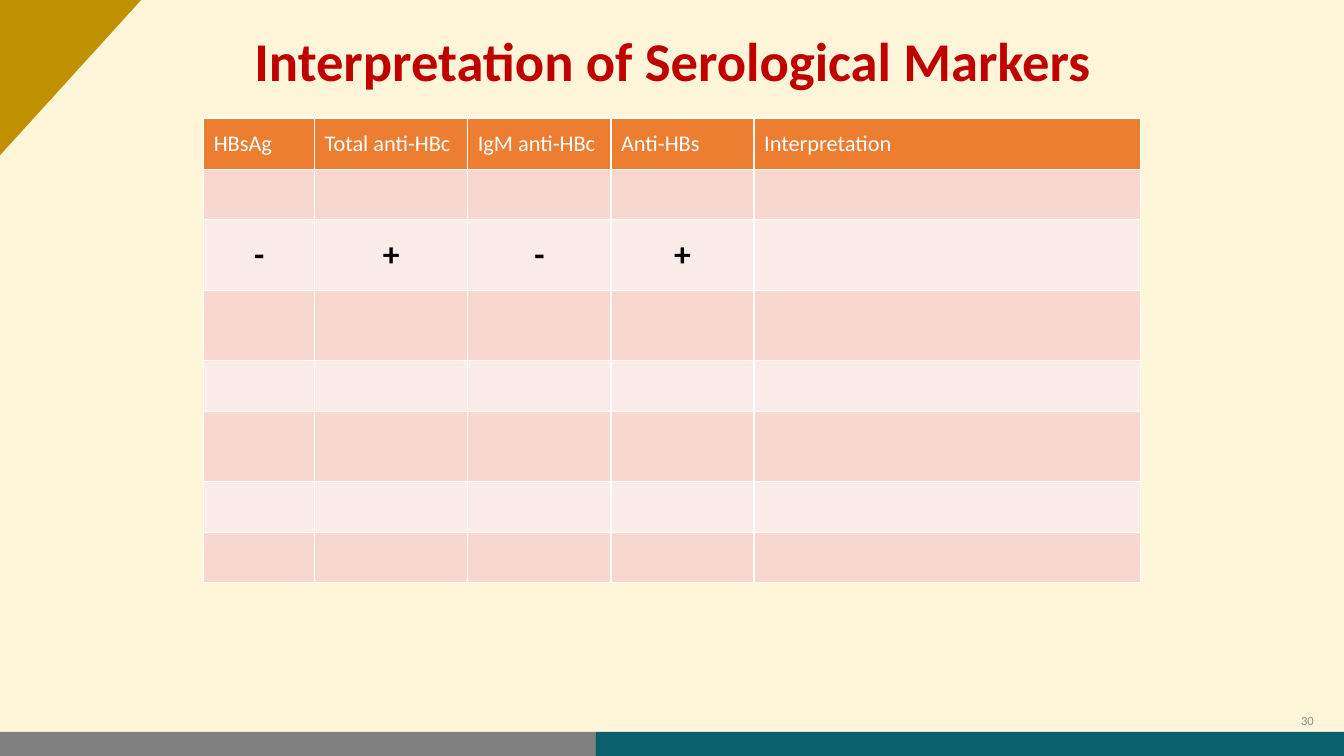
from lxml import etree
from pptx import Presentation
from pptx.dml.color import RGBColor
from pptx.enum.shapes import MSO_SHAPE
from pptx.enum.text import MSO_ANCHOR, PP_ALIGN
from pptx.oxml.ns import qn
from pptx.util import Inches, Pt

TITLE = "Interpretation of Serological Markers"
PAGE_NUMBER = "30"
HEADERS = ["HBsAg", "Total anti-HBc", "IgM anti-HBc", "Anti-HBs", "Interpretation"]
MARKER_ROWS = {2: ["-", "+", "-", "+", ""]}
COLUMN_WIDTHS = [1.1, 1.52, 1.42, 1.42, 3.83]
ROW_HEIGHTS = [0.51, 0.5, 0.7, 0.7, 0.5, 0.7, 0.5, 0.5]

FONT = "Calibri"
CREAM = RGBColor(0xFF, 0xF5, 0xD9)
GOLD = RGBColor(0xBF, 0x90, 0x00)
GRAY = RGBColor(0x80, 0x80, 0x80)
TEAL = RGBColor(0x09, 0x5F, 0x6C)
RED = RGBColor(0xC0, 0x00, 0x00)
ORANGE = RGBColor(0xED, 0x7D, 0x31)
DARK_BAND = RGBColor(0xF8, 0xD7, 0xCE)
LIGHT_BAND = RGBColor(0xFC, 0xEC, 0xE8)
WHITE = RGBColor(0xFF, 0xFF, 0xFF)
BLACK = RGBColor(0x00, 0x00, 0x00)
PALE_GRAY = RGBColor(0x8C, 0x8C, 0x8C)

RECTANGLE, TRIANGLE = MSO_SHAPE.RECTANGLE, MSO_SHAPE.ISOSCELES_TRIANGLE
LEFT, CENTER, RIGHT = PP_ALIGN.LEFT, PP_ALIGN.CENTER, PP_ALIGN.RIGHT
MIDDLE = MSO_ANCHOR.MIDDLE


def write(frame, text, size, color, bold, align):
    frame.text = text
    para = frame.paragraphs[0]
    para.alignment = align
    for span in para.runs:
        span.font.name = FONT
        span.font.size = Pt(size)
        span.font.bold = bold
        span.font.color.rgb = color
    return para


def add_plain_shape(page, kind, left, top, width, height, color):
    shape = page.shapes.add_shape(
        kind, Inches(left), Inches(top), Inches(width), Inches(height))
    shape.shadow.inherit = False
    shape.fill.solid()
    shape.fill.fore_color.rgb = color
    shape.line.fill.background()
    return shape


def outline_cell(cell):
    """Put a one-point white border on every side, ahead of the cell fill."""
    properties = cell._tc.get_or_add_tcPr()
    for position, side in enumerate(["a:lnL", "a:lnR", "a:lnT", "a:lnB"]):
        line = etree.Element(qn(side), w=str(Pt(1)))
        fill = etree.SubElement(line, qn("a:solidFill"))
        etree.SubElement(fill, qn("a:srgbClr"), val=str(WHITE))
        properties.insert(position, line)


def add_marker_table(page):
    table = page.shapes.add_table(
        len(ROW_HEIGHTS), len(COLUMN_WIDTHS), Inches(2.02), Inches(1.17),
        Inches(sum(COLUMN_WIDTHS)), Inches(sum(ROW_HEIGHTS))).table
    for column, width in zip(table.columns, COLUMN_WIDTHS):
        column.width = Inches(width)
    for row_index, height in enumerate(ROW_HEIGHTS):
        table.rows[row_index].height = Inches(height)
        markers = MARKER_ROWS.get(row_index, [""] * len(HEADERS))
        for column_index, marker in enumerate(markers):
            cell = table.cell(row_index, column_index)
            cell.vertical_anchor = MIDDLE
            cell.fill.solid()
            if row_index == 0:
                cell.fill.fore_color.rgb = ORANGE
                write(cell.text_frame, HEADERS[column_index], 16, WHITE, False, LEFT)
            else:
                cell.fill.fore_color.rgb = DARK_BAND if row_index % 2 else LIGHT_BAND
                if marker:
                    write(cell.text_frame, marker, 24, BLACK, True, CENTER)
            outline_cell(cell)


def main():
    deck = Presentation()
    deck.slide_width, deck.slide_height = Inches(13.33), Inches(7.5)
    page = deck.slides.add_slide(deck.slide_layouts[5])
    page.background.fill.solid()
    page.background.fill.fore_color.rgb = CREAM

    corner = add_plain_shape(page, TRIANGLE, 0, 0, 1.4, 1.54, GOLD)
    corner.adjustments[0] = 1
    corner.rotation = 180
    add_plain_shape(page, RECTANGLE, 0, 7.26, 5.91, 0.24, GRAY)
    add_plain_shape(page, RECTANGLE, 5.91, 7.26, 7.42, 0.24, TEAL)

    add_marker_table(page)

    title = page.shapes.title
    title.left, title.top = Inches(1.67), Inches(0.28)
    title.width, title.height = Inches(10), Inches(0.71)
    title.text_frame.vertical_anchor = MIDDLE
    write(title.text_frame, TITLE, 39, RED, True, CENTER).line_spacing = 0.9

    number = page.shapes.add_textbox(
        Inches(12.67), Inches(6.95), Inches(0.46), Inches(0.4)).text_frame
    number.word_wrap = True
    number.vertical_anchor = MIDDLE
    write(number, PAGE_NUMBER, 9, PALE_GRAY, False, RIGHT)

    deck.save("out.pptx")


if __name__ == "__main__":
    main()
